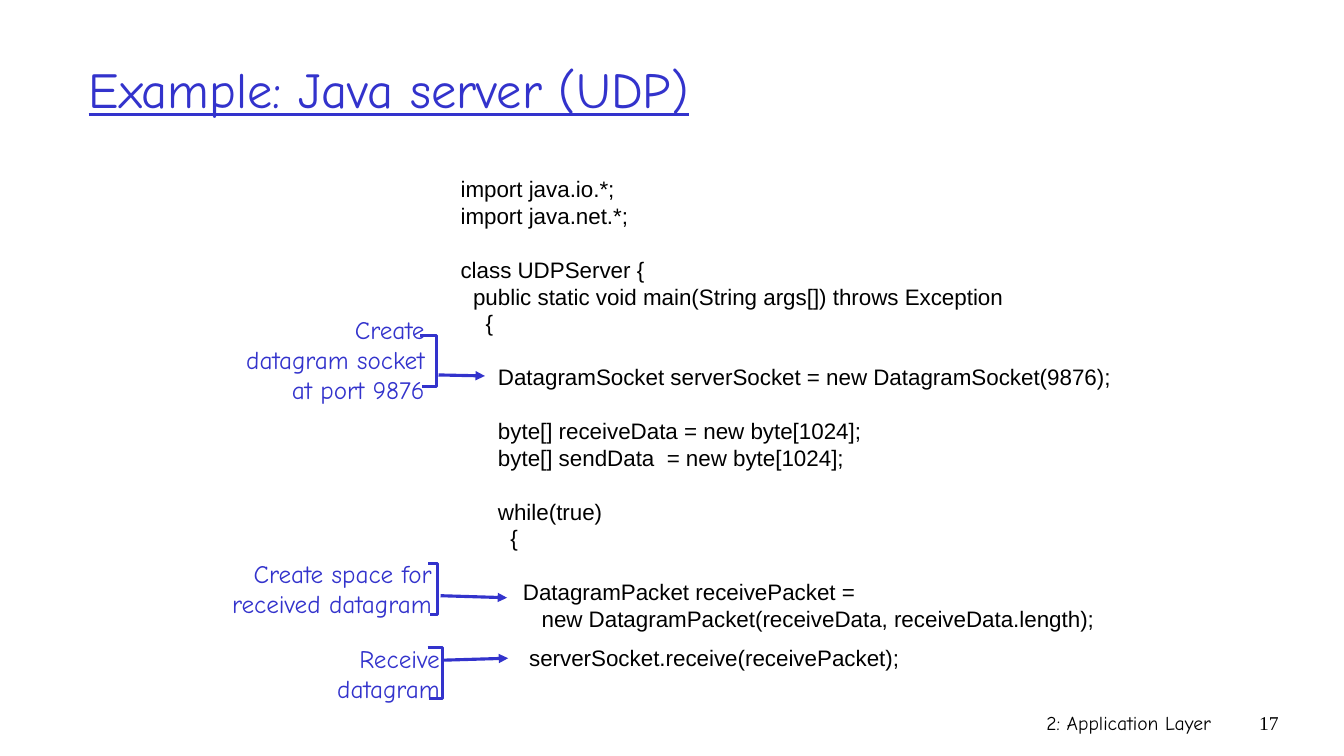
from dataclasses import dataclass
from typing import NamedTuple

from lxml.etree import SubElement
from pptx import Presentation
from pptx.dml.color import RGBColor
from pptx.enum.shapes import MSO_CONNECTOR
from pptx.enum.text import MSO_ANCHOR, PP_ALIGN
from pptx.oxml.ns import qn
from pptx.util import Inches, Pt

WIDE, HIGH = Inches(13.33), Inches(7.5)


@dataclass(frozen=True)
class Theme:
    blue: RGBColor = RGBColor(0x33, 0x33, 0xCC)
    black: RGBColor = RGBColor(0, 0, 0)
    comic: str = "Comic Neue"
    sans: str = "Arial"
    serif: str = "Times New Roman"
    title: float = 36
    note: float = 18
    code: float = 16
    foot: float = 14
    stroke: float = 2.25
    pitch: float = 19.2  # points from one code line to the next
    space: float = 4.45  # points taken by one space of code


THEME = Theme()


class Box(NamedTuple):
    """Left, top, width and height in percent of the slide."""
    left: float
    top: float
    width: float
    height: float


class Line(NamedTuple):
    """A line of code, its indent in spaces and the gap above in lines."""
    text: str
    indent: int = 0
    gap: float = 0


class Spot(NamedTuple):
    x: float
    y: float


@dataclass(frozen=True)
class Note:
    lines: list[str]
    box: Box
    start: Spot  # upper left end of the bracket
    edge: float  # right side of the bracket
    tail: Spot
    tip: Spot


CODE = [
    Line("import java.io.*;"),
    Line("import java.net.*;"),
    Line("class UDPServer {", 0, 1),
    Line("public static void main(String args[]) throws Exception", 2),
    Line("{", 4),
    Line("DatagramSocket serverSocket = new DatagramSocket(9876);", 6, 1),
    Line("byte[] receiveData = new byte[1024];", 6, 1),
    Line("byte[] sendData  = new byte[1024];", 6),
    Line("while(true)", 6, 1),
    Line("{", 8),
    Line("DatagramPacket receivePacket =", 10, 1),
    Line("new DatagramPacket(receiveData, receiveData.length);", 13),
    Line("serverSocket.receive(receivePacket);", 11, 0.45),
]

NOTES = [
    Note(["Create", "datagram socket", "at port 9876"], Box(16.2, 40.93, 16.13, 13.33),
         Spot(31.28, 44.4), 32.5, Spot(32.63, 49.6), Spot(36.08, 49.73)),
    Note(["Create space for", "received datagram"], Box(15.08, 73.2, 17.78, 9.33),
         Spot(31.88, 74.53), 32.56, Spot(32.78, 78.8), Spot(37.73, 79.07)),
    Note(["Receive", "datagram"], Box(23.41, 84.4, 10.05, 9.33),
         Spot(31.81, 85.6), 32.93, Spot(32.93, 87.33), Spot(37.81, 87.07)),
]
SPAN = 6.75  # height of every bracket


def across(share: float) -> int:
    return round(WIDE * share / 100)


def down(share: float) -> int:
    return round(HIGH * share / 100)


def place(box: Box) -> tuple[int, int, int, int]:
    return across(box.left), down(box.top), across(box.width), down(box.height)


def write(frame, lines: list[Line], *, size: float, font: str = THEME.comic,
          color: RGBColor = THEME.black, align=PP_ALIGN.LEFT,
          anchor=MSO_ANCHOR.TOP, pitch: float = 0, under: bool = False) -> None:
    """Fill a text frame, one paragraph to a line."""
    frame.word_wrap = True
    frame.vertical_anchor = anchor
    for index, line in enumerate(lines):
        para = frame.paragraphs[0] if index == 0 else frame.add_paragraph()
        para.alignment = align
        if pitch:
            para.line_spacing = Pt(pitch)
            para.space_before = Pt(line.gap * pitch)
        if line.indent:
            para._p.get_or_add_pPr().set("marL", str(Pt(line.indent * THEME.space)))
        run = para.add_run()
        run.text = line.text
        run.font.name = font
        run.font.size = Pt(size)
        run.font.color.rgb = color
        if under:
            run.font.underline = True


def add_text(slide, box: Box, lines: list[Line], **style) -> None:
    write(slide.shapes.add_textbox(*place(box)).text_frame, lines, **style)


def ink(shape) -> None:
    shape.line.color.rgb = THEME.blue
    shape.line.width = Pt(THEME.stroke)


def add_brace(slide, start: Spot, edge: float) -> None:
    """Draw a square bracket that opens to the left."""
    left, right = across(start.x), across(edge)
    top, base = down(start.y), down(start.y + SPAN)
    pen = slide.shapes.build_freeform(left, top)
    pen.add_line_segments(
        [(right, top), (right, base), (across(start.x + 0.1), base)], close=False)
    brace = pen.convert_to_shape()
    brace.fill.background()
    brace.shadow.inherit = False
    ink(brace)


def add_arrow(slide, tail: Spot, tip: Spot) -> None:
    arrow = slide.shapes.add_connector(
        MSO_CONNECTOR.STRAIGHT, across(tail.x), down(tail.y), across(tip.x), down(tip.y))
    ink(arrow)
    SubElement(arrow.line._get_or_add_ln(), qn("a:tailEnd"), type="triangle")
    SubElement(arrow._element.spPr, qn("a:effectLst"))


def main() -> None:
    deck = Presentation()
    deck.slide_width, deck.slide_height = WIDE, HIGH
    slide = deck.slides.add_slide(deck.slide_layouts[5])

    title = slide.shapes.title
    title.left, title.top, title.width, title.height = place(Box(5.85, 3.33, 85, 16.67))
    write(title.text_frame, [Line("Example: Java server (UDP)")], size=THEME.title,
          color=THEME.blue, anchor=MSO_ANCHOR.MIDDLE, under=True)

    add_text(slide, Box(59.19, 93.33, 31.66, 6.67), [Line("2: Application Layer")],
             size=THEME.foot, align=PP_ALIGN.RIGHT)
    add_text(slide, Box(90.85, 93.33, 5.03, 6.67), [Line("17")],
             size=THEME.foot, font=THEME.serif, align=PP_ALIGN.RIGHT)
    add_text(slide, Box(33.53, 22.53, 50.56, 67.33), CODE, size=THEME.code,
             font=THEME.sans, pitch=THEME.pitch)

    for note in NOTES:
        add_text(slide, note.box, [Line(text) for text in note.lines], size=THEME.note,
                 color=THEME.blue, align=PP_ALIGN.RIGHT, anchor=MSO_ANCHOR.MIDDLE,
                 pitch=21.5)
        add_brace(slide, note.start, note.edge)
        add_arrow(slide, note.tail, note.tip)

    deck.save("out.pptx")


if __name__ == "__main__":
    main()
